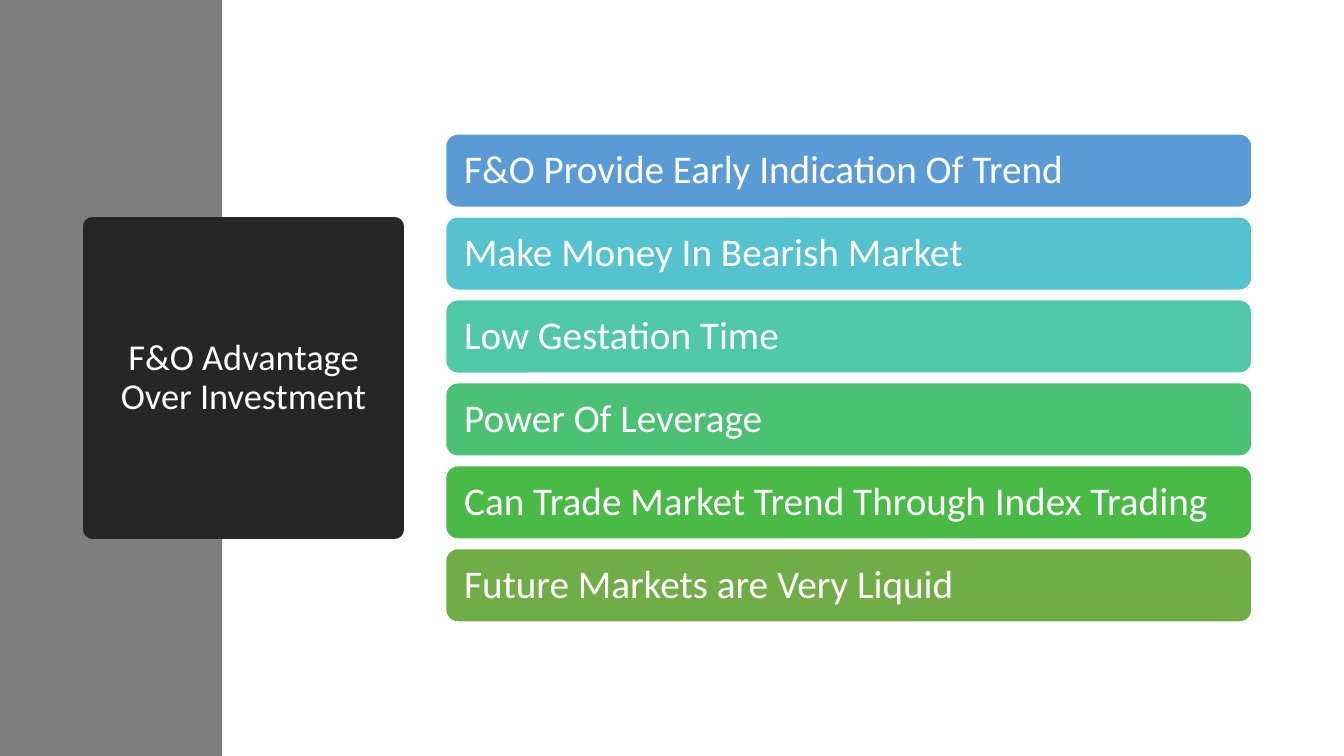
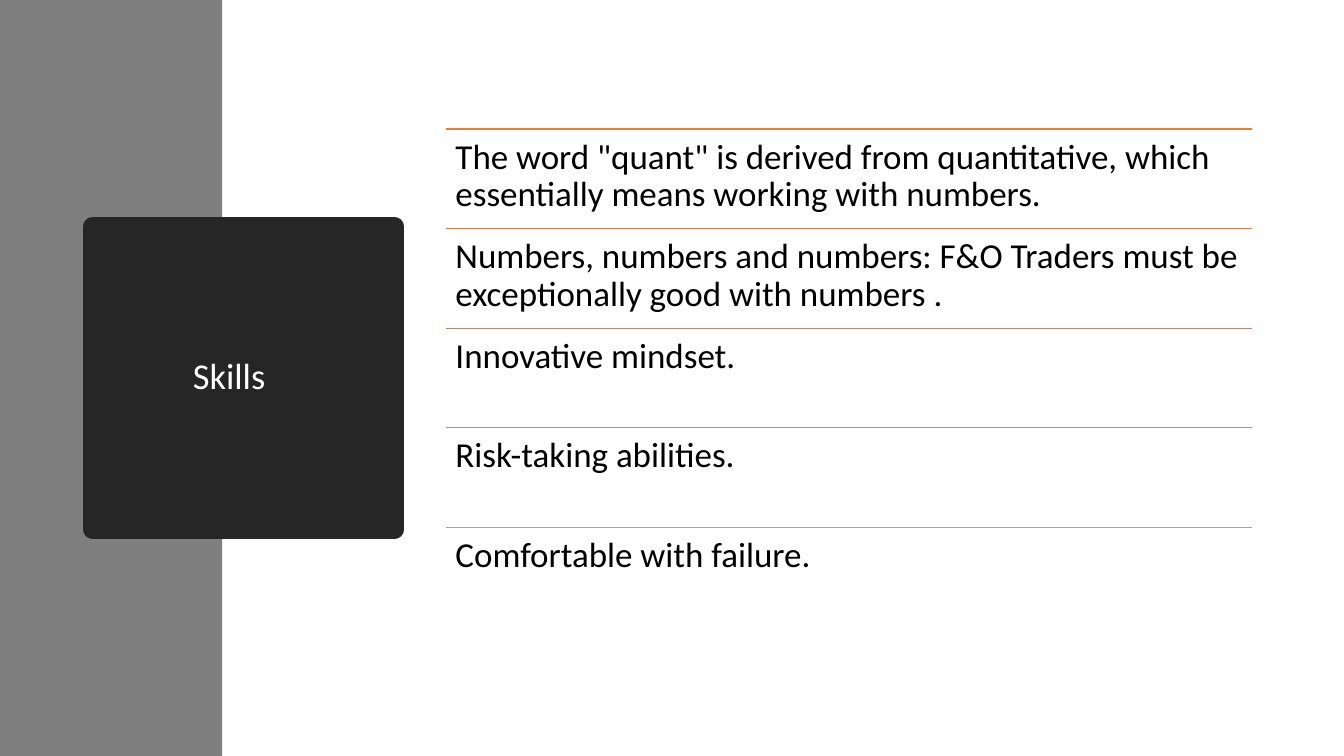
from pptx import Presentation
from pptx.dml.color import RGBColor
from pptx.enum.shapes import MSO_CONNECTOR as LINE, MSO_SHAPE as SHAPE
from pptx.enum.text import MSO_ANCHOR as ANCHOR, MSO_AUTO_SIZE as FIT, PP_ALIGN as ALIGN
from pptx.oxml.xmlchemy import OxmlElement
from pptx.util import Cm, Pt

COLORS = {
    "band": "7F7F7F",
    "title": "262626",
    "light": "FFFFFF",
    "dark": "000000",
    "bars": ["5B9BD5", "55C3CF", "50C8A7", "4BC174", "4ABA46", "70AD47"],
    "rules": ["ED7D31", "D87A51", "C48170", "B4908B", "A5A5A5"],
}
FONT = "Calibri"

ADVANTAGES = [
    "F&O Provide Early Indication Of Trend",
    "Make Money In Bearish Market",
    "Low Gestation Time",
    "Power Of Leverage",
    "Can Trade Market Trend Through Index Trading",
    "Future Markets are Very Liquid",
]
SKILLS = [
    'The word "quant" is derived from quantitative, which essentially means working with numbers.',
    "Numbers, numbers and numbers: F&O Traders must be exceptionally good with numbers .",
    "Innovative mindset.",
    "Risk-taking abilities.",
    "Comfortable with failure.",
]

SLIDE_W, SLIDE_H = 33.87, 19.05
BAND_W = 5.6
TITLE_LEFT, TITLE_SIDE = 2.33, 7.62
LIST_LEFT, LIST_W = 11.23, 20.32
BAR_H, BAR_GAP = 1.85, 0.24
SKILL_H = 2.51

TITLE_TEXT = {"size": 26, "color": "light", "align": ALIGN.CENTER, "anchor": ANCHOR.MIDDLE, "inset": 0.25}
BAR_TEXT = {"size": 28, "color": "light", "align": ALIGN.LEFT, "anchor": ANCHOR.MIDDLE, "inset": 0.38}
SKILL_TEXT = {"size": 25, "color": "dark", "align": ALIGN.LEFT, "anchor": ANCHOR.TOP, "inset": 0.25}


def rgb(value):
    return RGBColor.from_string(value)


def place(shape, left, top, width, height):
    for side, value in {"left": left, "top": top, "width": width, "height": height}.items():
        setattr(shape, side, Cm(value))


def write(shape, text, style):
    frame = shape.text_frame
    frame.text = text
    inset = Cm(style["inset"])
    frame_format = {
        "word_wrap": True,
        "auto_size": FIT.NONE,
        "vertical_anchor": style["anchor"],
        "margin_left": inset,
        "margin_right": inset,
        "margin_top": inset,
        "margin_bottom": inset,
    }
    for name, value in frame_format.items():
        setattr(frame, name, value)
    paragraph = frame.paragraphs[0]
    paragraph.alignment = style["align"]
    paragraph.line_spacing = 0.9
    font = paragraph.runs[0].font
    for name, value in {"name": FONT, "size": Pt(style["size"])}.items():
        setattr(font, name, value)
    font.color.rgb = rgb(COLORS[style["color"]])


def paint(shape, fill, line=None, line_width=1):
    shape.fill.solid()
    shape.fill.fore_color.rgb = rgb(fill)
    if line:
        shape.line.color.rgb = rgb(line)
        shape.line.width = Pt(line_width)
    else:
        shape.line.fill.background()


def add_block(slide, kind, left, top, width, height, fill, line=None):
    block = slide.shapes.add_shape(kind, Cm(left), Cm(top), Cm(width), Cm(height))
    block.shadow.inherit = False
    paint(block, fill, line)
    return block


def add_slide(deck, heading, shift=0):
    slide = deck.slides.add_slide(deck.slide_layouts[5])
    title = slide.shapes.title
    place(title, TITLE_LEFT, (SLIDE_H - TITLE_SIDE) / 2, TITLE_SIDE, TITLE_SIDE)
    write(title, heading, TITLE_TEXT)
    title.text_frame.margin_right += Cm(shift)
    paint(title, COLORS["title"], COLORS["title"], 13.75)
    title.line.fill
    band = add_block(slide, SHAPE.RECTANGLE, 0, 0, BAND_W, SLIDE_H, COLORS["band"])
    title.element.addprevious(band.element)
    return slide


def row_tops(count, height, gap=0):
    first = (SLIDE_H - count * height - (count - 1) * gap) / 2
    return [first + i * (height + gap) for i in range(count)]


def add_bars(slide):
    tops = row_tops(len(ADVANTAGES), BAR_H, BAR_GAP)
    for text, color, top in zip(ADVANTAGES, COLORS["bars"], tops):
        bar = add_block(slide, SHAPE.ROUNDED_RECTANGLE, LIST_LEFT, top, LIST_W, BAR_H, color, COLORS["light"])
        write(bar, text, BAR_TEXT)


def add_skills(slide):
    tops = row_tops(len(SKILLS), SKILL_H)
    for text, color, top in zip(SKILLS, COLORS["rules"], tops):
        rule = slide.shapes.add_connector(
            LINE.STRAIGHT, Cm(LIST_LEFT), Cm(top), Cm(LIST_LEFT + LIST_W), Cm(top)
        )
        rule.line.color.rgb = rgb(color)
        rule.line.width = Pt(1)
        rule.element.spPr.append(OxmlElement("a:effectLst"))
        skill = slide.shapes.add_textbox(Cm(LIST_LEFT), Cm(top), Cm(LIST_W), Cm(SKILL_H))
        write(skill, text, SKILL_TEXT)


def main():
    deck = Presentation()
    deck.slide_width, deck.slide_height = Cm(SLIDE_W), Cm(SLIDE_H)
    add_bars(add_slide(deck, "F&O Advantage Over Investment"))
    add_skills(add_slide(deck, "Skills", shift=0.73))
    deck.save("out.pptx")


if __name__ == "__main__":
    main()
